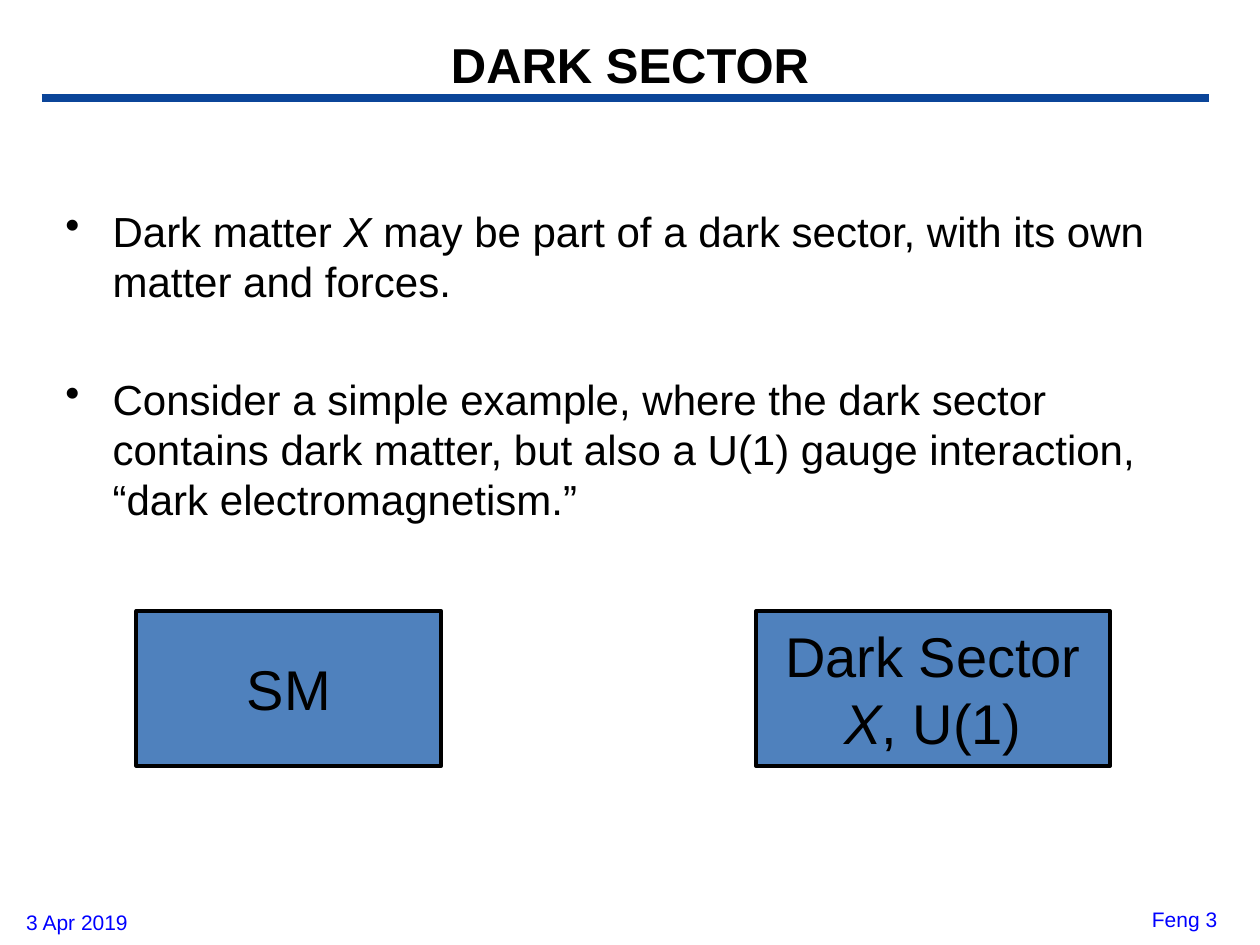
from dataclasses import dataclass

from lxml.etree import SubElement
from pptx import Presentation
from pptx.dml.color import RGBColor as Color
from pptx.enum.shapes import MSO_CONNECTOR as Connector, MSO_SHAPE as Shape
from pptx.enum.text import MSO_ANCHOR as Anchor, PP_ALIGN as Align
from pptx.oxml.ns import qn
from pptx.util import Cm, Pt


@dataclass(frozen=True)
class Theme:
    font: str = "Arial"
    ink: str = "000000"
    footer: str = "0000FF"
    rule: str = "0B4599"
    box: str = "4F81BD"
    title_size: int = 28
    body_size: int = 24
    box_size: int = 32
    footer_size: int = 12
    rule_width: float = 4.5
    border_width: float = 2.25


THEME = Theme()

# A paragraph is a list of (text, italic) runs.
TITLE = [[("DARK SECTOR", False)]]
BULLETS = [
    [("Dark matter", False), (" X ", True),
     ("may be part of a dark sector, with its own matter and forces.", False)],
    [("Consider a simple example, where the dark sector contains dark matter, "
      "but also a U(1) gauge interaction, “dark electromagnetism.”", False)],
]
DATE = [[("3 Apr 2019", False)]]
PAGE = [[("Feng 3", False)]]

# Left and width in cm, then the label
SECTORS = [
    (2.75, 6.15, [[("SM", False)]]),
    (15.24, 7.14, [[("Dark Sector", False)], [("X", True), (", U(1)", False)]]),
]
SECTOR_TOP, SECTOR_HEIGHT = 12.32, 3.12

BULLET_INDENT = Cm(0.95)
BULLET_SPACING = [Pt(4.8), Pt(38.4)]


def write(shape, paragraphs, size, color=THEME.ink, align=Align.LEFT,
          anchor=Anchor.TOP, bold=False, wrap=True):
    frame = shape.text_frame
    frame.word_wrap = wrap
    frame.vertical_anchor = anchor
    for index, runs in enumerate(paragraphs):
        paragraph = frame.add_paragraph() if index else frame.paragraphs[0]
        paragraph.alignment = align
        font = paragraph.font
        font.name, font.size, font.bold = THEME.font, Pt(size), bold
        font.color.rgb = Color.from_string(color)
        for text, italic in runs:
            run = paragraph.add_run()
            run.text = text
            run.font.italic = italic


def add_text(slide, left, top, width, height, paragraphs, size, **style):
    box = slide.shapes.add_textbox(Cm(left), Cm(top), Cm(width), Cm(height))
    write(box, paragraphs, size, **style)
    return box


def add_rule(slide):
    y = Cm(1.98)
    rule = slide.shapes.add_connector(Connector.STRAIGHT, Cm(0.84), y, Cm(24.38), y)
    rule.line.color.rgb = Color.from_string(THEME.rule)
    rule.line.width = Pt(THEME.rule_width)
    SubElement(rule.element.spPr, qn("a:effectLst"))


def add_bullets(slide):
    body = add_text(slide, 1.07, 4.01, 23.06, 13.13, BULLETS, THEME.body_size)
    for paragraph, spacing in zip(body.text_frame.paragraphs, BULLET_SPACING):
        paragraph.space_before = spacing
        properties = paragraph._p.get_or_add_pPr()
        properties.set("marL", str(BULLET_INDENT))
        properties.set("indent", str(-BULLET_INDENT))
        # The bullet has to come before the default run properties.
        bullet = properties.makeelement(qn("a:buChar"), {"char": "•"})
        properties.find(qn("a:defRPr")).addprevious(bullet)


def add_sector(slide, left, width, label):
    box = slide.shapes.add_shape(Shape.RECTANGLE, Cm(left), Cm(SECTOR_TOP),
                                 Cm(width), Cm(SECTOR_HEIGHT))
    box.shadow.inherit = False
    box.fill.solid()
    box.fill.fore_color.rgb = Color.from_string(THEME.box)
    box.line.color.rgb = Color.from_string(THEME.ink)
    box.line.width = Pt(THEME.border_width)
    write(box, label, THEME.box_size, align=Align.CENTER,
          anchor=Anchor.MIDDLE, wrap=False)


def main():
    presentation = Presentation()
    presentation.slide_width, presentation.slide_height = Cm(25.4), Cm(19.05)
    slide = presentation.slides.add_slide(presentation.slide_layouts[6])

    add_rule(slide)
    add_text(slide, 0.28, 18.21, 5.28, 0.79, DATE, THEME.footer_size,
             color=THEME.footer)
    add_text(slide, 19.51, 18.16, 5.28, 0.89, PAGE, THEME.footer_size,
             color=THEME.footer, align=Align.RIGHT)
    add_text(slide, 1.9, 0.28, 21.6, 2.03, TITLE, THEME.title_size,
             align=Align.CENTER, anchor=Anchor.MIDDLE, bold=True)
    add_bullets(slide)
    for left, width, label in SECTORS:
        add_sector(slide, left, width, label)

    presentation.save("out.pptx")


if __name__ == "__main__":
    main()
